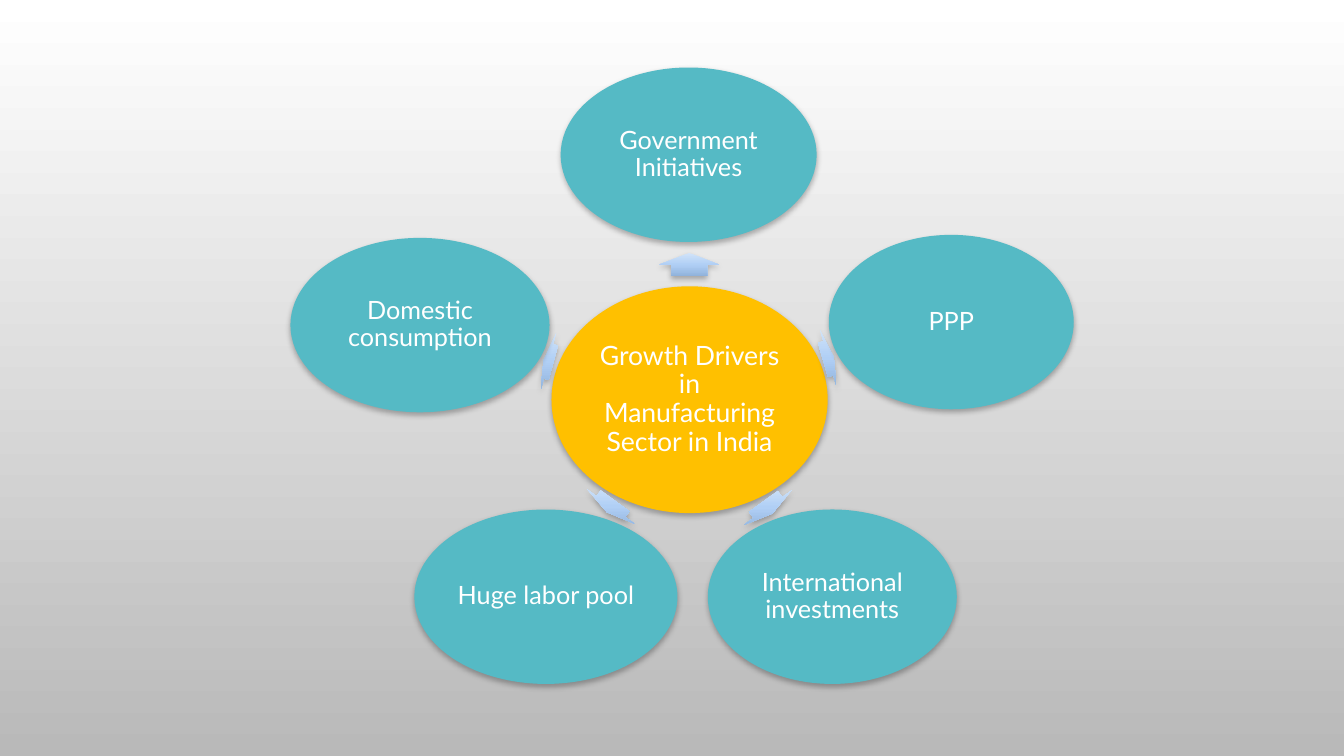
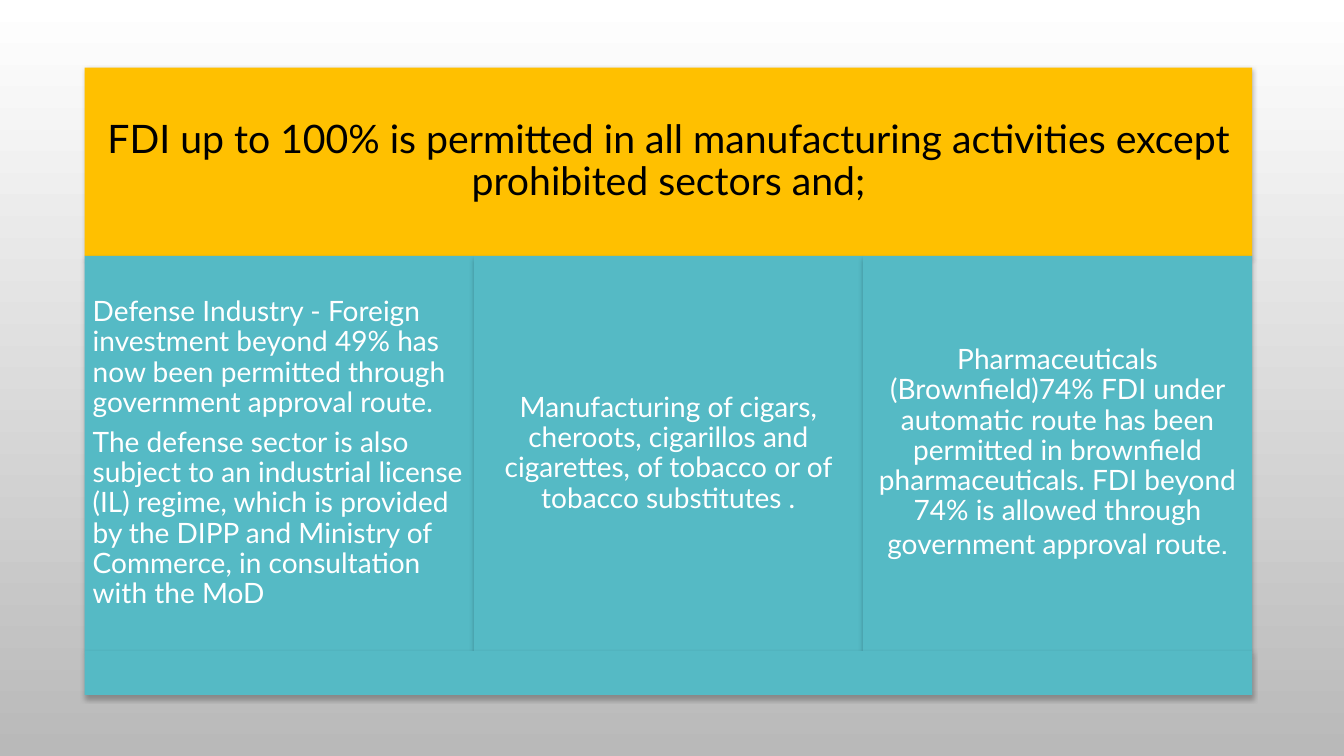
from copy import deepcopy
from dataclasses import dataclass

from lxml.etree import SubElement
from pptx import Presentation
from pptx.dml.color import RGBColor
from pptx.dml.fill import FillFormat
from pptx.enum.shapes import MSO_SHAPE
from pptx.enum.text import MSO_ANCHOR, PP_ALIGN
from pptx.oxml.ns import qn
from pptx.shapes.autoshape import Shape
from pptx.slide import Slide
from pptx.util import Emu, Inches, Pt

SLIDE_WIDTH = Inches(13.33)
SLIDE_HEIGHT = Inches(7.5)
AMBER = "FFC000"
TEAL = "55BAC5"
WHITE = "FFFFFF"
BLACK = "000000"
BACKDROP = [WHITE, "B9B9B9"]
ARROW_BLUES = ["D2E4F9", "B0CFF5", "90B2DB"]
BODY_FONT = "Lato"


@dataclass(frozen=True)
class Frame:
    """Left, top, width and height in percent of the slide."""

    left: float
    top: float
    width: float
    height: float


@dataclass(frozen=True)
class Arrow:
    center_x: float
    center_y: float
    length: float
    rotation: float


@dataclass(frozen=True)
class Driver:
    label: str
    center_x: float
    center_y: float
    width: float
    arrow: Arrow


@dataclass(frozen=True)
class Span:
    text: str
    size: float = 20
    font: str = BODY_FONT


@dataclass(frozen=True)
class Column:
    paras: list[list[Span]]
    align: PP_ALIGN = PP_ALIGN.CENTER


DRIVER_HEIGHT = 23.07
ARROW_HEIGHT = 7.87
DRIVERS = [
    Driver("Government Initiatives", 51.24, 20.47, 19.05, Arrow(51.28, 35, 1.73, 270)),
    Driver("PPP", 70.78, 42.6, 18.23, Arrow(61.63, 47.4, 0.83, 343.6)),
    Driver("International investments", 61.93, 78.93, 18.53, Arrow(57.13, 67.13, 1.13, 54)),
    Driver("Huge labor pool", 40.62, 78.93, 19.58, Arrow(45.46, 67, 1.05, 126)),
    Driver("Domestic consumption", 31.25, 43, 19.28, Arrow(40.81, 47.8, 0.75, 195.3)),
]

TABLE_LEFT = 6.3
TABLE_TOP = 8.93
TABLE_WIDTH = 86.87
HEADER_HEIGHT = 24.93
BODY_HEIGHT = 52.27
FOOT_HEIGHT = 5.8
COLUMNS = [
    Column(
        [
            [Span("Defense Industry - Foreign investment beyond 49% has now been "
                  "permitted through government approval route.")],
            [Span("The defense sector is also subject to an industrial license (IL) "
                  "regime, which is provided by the DIPP and Ministry of Commerce, "
                  "in consultation with the MoD")],
        ],
        PP_ALIGN.LEFT,
    ),
    Column([[Span("Manufacturing of cigars, cheroots, cigarillos and cigarettes, "
                  "of tobacco or of tobacco substitutes .")]]),
    Column([[Span("Pharmaceuticals (Brownfield)74% FDI under automatic route has been "
                  "permitted in brownfield pharmaceuticals. FDI beyond 74% is allowed "
                  "through government approval route"),
             Span(".", 23, "Cabin")]]),
]


def color(value: str) -> RGBColor:
    return RGBColor.from_string(value)


def across(percent: float) -> Emu:
    return Emu(round(SLIDE_WIDTH * percent / 100))


def down(percent: float) -> Emu:
    return Emu(round(SLIDE_HEIGHT * percent / 100))


def centered(x: float, y: float, width: float, height: float) -> Frame:
    return Frame(x - width / 2, y - height / 2, width, height)


def paint_gradient(owner: Slide | Shape, fill: FillFormat, colors: list[str]) -> None:
    fill.gradient()
    fill.gradient_angle = 270
    gradient = owner.element.xpath(".//a:gradFill")[0]
    gradient.set("rotWithShape", "0")
    stops = gradient.find(qn("a:gsLst"))
    while len(stops) < len(colors):
        stops.append(deepcopy(stops[-1]))
    for index, (stop, value) in enumerate(zip(fill.gradient_stops, colors)):
        stop.color.rgb = color(value)
        stop.position = index / (len(colors) - 1)


def add_shadow(shape: Shape) -> None:
    shape.shadow.inherit = False
    effects = shape.element.spPr.find(qn("a:effectLst"))
    shadow = SubElement(effects, qn("a:outerShdw"), blurRad=str(Pt(4)),
                        dist=str(Pt(2)), dir="5400000", rotWithShape="0")
    tone = SubElement(shadow, qn("a:srgbClr"), val=BLACK)
    SubElement(tone, qn("a:alpha"), val="28000")


def add_block(page: Slide, kind: MSO_SHAPE, frame: Frame, fill: str | list[str]) -> Shape:
    block = page.shapes.add_shape(kind, across(frame.left), down(frame.top),
                                  across(frame.width), down(frame.height))
    block.line.fill.background()
    if isinstance(fill, list):
        paint_gradient(block, block.fill, fill)
    else:
        block.fill.solid()
        block.fill.fore_color.rgb = color(fill)
    add_shadow(block)
    return block


def write(block: Shape, paras: list[list[Span]], *, ink: str = WHITE,
          align: PP_ALIGN = PP_ALIGN.CENTER, inset: float = 0.03) -> None:
    box = block.text_frame
    box.word_wrap = True
    box.vertical_anchor = MSO_ANCHOR.MIDDLE
    box.margin_left = box.margin_right = Inches(inset)
    box.margin_top = box.margin_bottom = Inches(inset)
    for index, spans in enumerate(paras):
        para = box.add_paragraph() if index else box.paragraphs[0]
        para.alignment = align
        para.line_spacing = 0.9
        para.space_after = Pt(0.35 * spans[0].size)
        for span in spans:
            run = para.add_run()
            run.text = span.text
            run.font.size = Pt(span.size)
            run.font.name = span.font
            run.font.color.rgb = color(ink)


def add_page(deck: Presentation) -> Slide:
    page = deck.slides.add_slide(deck.slide_layouts[6])
    paint_gradient(page, page.background.fill, BACKDROP)
    return page


def add_arrow(page: Slide, arrow: Arrow) -> None:
    frame = centered(arrow.center_x, arrow.center_y, arrow.length, ARROW_HEIGHT)
    shape = add_block(page, MSO_SHAPE.RIGHT_ARROW, frame, ARROW_BLUES)
    shape.adjustments[0] = 0.6
    shape.adjustments[1] = 0.5
    shape.rotation = arrow.rotation


def build_drivers(deck: Presentation) -> None:
    page = add_page(deck)
    hub = add_block(page, MSO_SHAPE.OVAL, centered(51.31, 52.87, 20.55, 30), AMBER)
    write(hub, [[Span("Growth Drivers in Manufacturing Sector in India", 19)]])
    for driver in DRIVERS:
        add_arrow(page, driver.arrow)
        frame = centered(driver.center_x, driver.center_y, driver.width, DRIVER_HEIGHT)
        write(add_block(page, MSO_SHAPE.OVAL, frame, TEAL), [[Span(driver.label, 18)]])


def build_investment_limits(deck: Presentation) -> None:
    page = add_page(deck)
    header = add_block(page, MSO_SHAPE.RECTANGLE,
                       Frame(TABLE_LEFT, TABLE_TOP, TABLE_WIDTH, HEADER_HEIGHT), AMBER)
    write(header, [[Span("FDI up to 100% is permitted in all manufacturing activities "
                         "except prohibited sectors and;", 28)]], ink=BLACK, inset=0.12)
    body_top = TABLE_TOP + HEADER_HEIGHT
    column_width = TABLE_WIDTH / len(COLUMNS)
    for index, column in enumerate(COLUMNS):
        frame = Frame(TABLE_LEFT + index * column_width, body_top, column_width, BODY_HEIGHT)
        block = add_block(page, MSO_SHAPE.RECTANGLE, frame, TEAL)
        write(block, column.paras, align=column.align, inset=0.08)
    foot = Frame(TABLE_LEFT, body_top + BODY_HEIGHT, TABLE_WIDTH, FOOT_HEIGHT)
    add_block(page, MSO_SHAPE.RECTANGLE, foot, TEAL)


def main() -> None:
    deck = Presentation()
    deck.slide_width = SLIDE_WIDTH
    deck.slide_height = SLIDE_HEIGHT
    build_drivers(deck)
    build_investment_limits(deck)
    deck.save("out.pptx")


if __name__ == "__main__":
    main()
